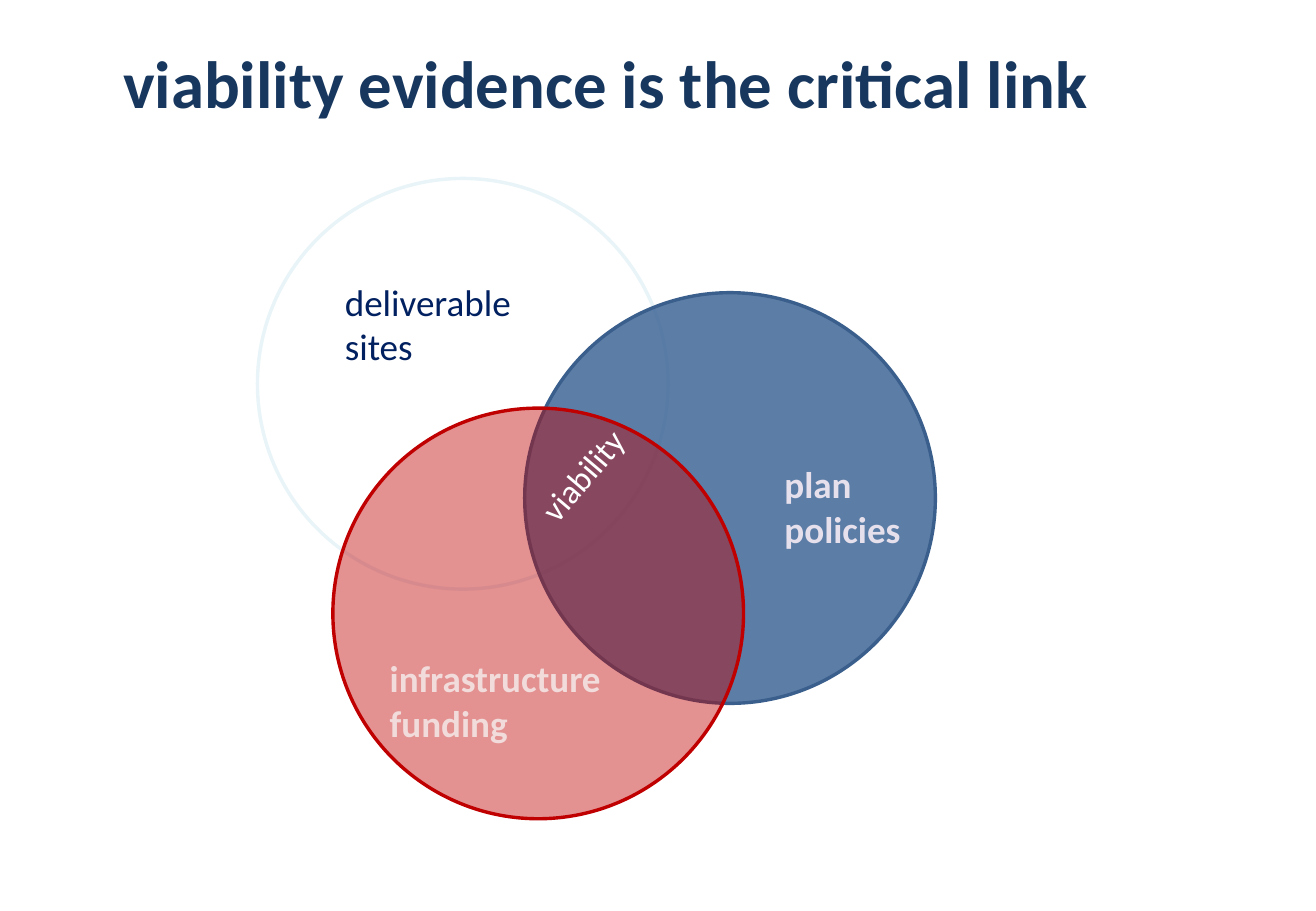
from lxml.etree import SubElement
from pptx import Presentation
from pptx.dml.color import RGBColor
from pptx.enum.shapes import MSO_SHAPE
from pptx.enum.text import MSO_ANCHOR, PP_ALIGN
from pptx.oxml.ns import qn
from pptx.util import Pt

NAVY = RGBColor(0x17, 0x37, 0x5E)
INK = RGBColor(0x00, 0x20, 0x60)
BLUE = RGBColor(0x37, 0x60, 0x92)
BLUE_EDGE = RGBColor(0x3A, 0x5F, 0x8C)
RED = RGBColor(0xC0, 0x00, 0x00)
ICE = RGBColor(0xE8, 0xF4, 0xF8)
LILAC = RGBColor(0xE6, 0xE0, 0xEC)
PINK = RGBColor(0xF2, 0xDC, 0xDB)
WHITE = RGBColor(0xFF, 0xFF, 0xFF)

DIAMETER = 243.4
CIRCLES = [
    ((152.6, 105.8), WHITE, 100, ICE),
    ((311, 173.5), BLUE, 81, BLUE_EDGE),
    ((197.3, 241.9), RED, 43, RED),
]
TEXTS = [
    ("viability evidence is the critical link", (66, 3.6, 648, 90), 0,
     MSO_ANCHOR.MIDDLE, {"size": Pt(39.6), "bold": True}, NAVY),
    ("deliverable sites", (197.3, 162, 113.2, 60.5), 0,
     MSO_ANCHOR.TOP, {"size": Pt(22), "bold": False}, INK),
    ("plan policies", (457.9, 270, 124.6, 60.5), 0,
     MSO_ANCHOR.TOP, {"size": Pt(22), "bold": True}, LILAC),
    ("viability", (301, 254.2, 108, 31.7), 310.4,
     MSO_ANCHOR.TOP, {"size": Pt(20), "bold": False}, WHITE),
    ("infrastructure funding", (223.9, 385.2, 153.4, 60.5), 0,
     MSO_ANCHOR.TOP, {"size": Pt(22), "bold": True}, PINK),
]


def add_circle(s, corner, fill, opacity, edge):
    sp = s.shapes.add_shape(
        MSO_SHAPE.OVAL, *map(Pt, corner), Pt(DIAMETER), Pt(DIAMETER))
    sp.shadow.inherit = False
    sp.fill.solid()
    sp.fill.fore_color.rgb = fill
    if opacity < 100:
        color = sp.element.spPr.find(qn("a:solidFill")).find(qn("a:srgbClr"))
        SubElement(color, qn("a:alpha")).set("val", str(opacity * 1000))
    sp.line.color.rgb = edge
    sp.line.width = Pt(2)


def add_text(s, text, box, angle, anchor, font, color):
    sp = s.shapes.add_textbox(*map(Pt, box))
    sp.rotation = angle
    tf = sp.text_frame
    tf.word_wrap = True
    tf.vertical_anchor = anchor
    p = tf.paragraphs[0]
    p.alignment = PP_ALIGN.LEFT
    r = p.add_run()
    r.text = text
    for name, value in {"name": "Calibri", **font}.items():
        setattr(r.font, name, value)
    r.font.color.rgb = color


def main():
    prs = Presentation()
    prs.slide_width, prs.slide_height = Pt(780), Pt(540)
    s = prs.slides.add_slide(prs.slide_layouts[6])
    for circle in CIRCLES:
        add_circle(s, *circle)
    for text in TEXTS:
        add_text(s, *text)
    prs.save("out.pptx")


if __name__ == "__main__":
    main()
